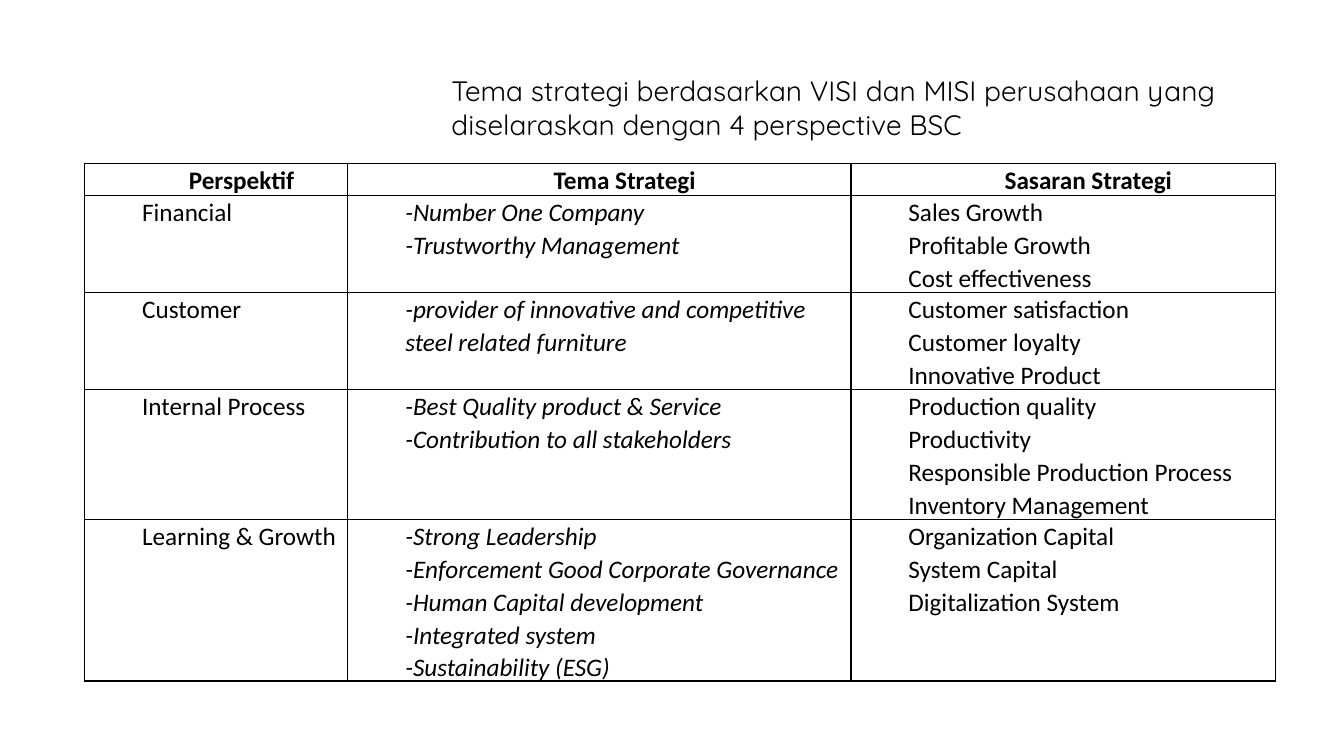
"""Build a slide with a table of strategy themes by scorecard perspective."""
from lxml.etree import SubElement
from pptx import Presentation
from pptx.dml.color import RGBColor
from pptx.enum.text import PP_ALIGN
from pptx.oxml.ns import qn
from pptx.util import Inches, Pt

COLORS = {"ink": "000000"}
INK = RGBColor.from_string(COLORS["ink"])
LINE = 0.32
WIDTHS = [2.61, 4.99, 4.21]
ROWS = [
    [["Perspektif"], ["Tema Strategi"], ["Sasaran Strategi"]],
    [["Financial"],
     ["-Number One Company", "-Trustworthy Management"],
     ["Sales Growth", "Profitable Growth", "Cost effectiveness"]],
    [["Customer"],
     ["-provider of innovative and competitive steel related furniture"],
     ["Customer satisfaction", "Customer loyalty", "Innovative Product"]],
    [["Internal Process"],
     ["-Best Quality product & Service", "-Contribution to all stakeholders"],
     ["Production quality", "Productivity", "Responsible Production Process",
      "Inventory Management"]],
    [["Learning & Growth"],
     ["-Strong Leadership", "-Enforcement Good Corporate Governance",
      "-Human Capital development", "-Integrated system",
      "-Sustainability (ESG)"],
     ["Organization Capital", "System Capital", "Digitalization System"]],
]


def style(font, name, size):
    font.name = name
    font.size = Pt(size)
    font.color.rgb = INK


def border(cell):
    props = cell._tc.get_or_add_tcPr()
    for side in ("lnL", "lnR", "lnT", "lnB"):
        line = SubElement(props, qn(f"a:{side}"), w=str(Pt(1)))
        fill = SubElement(line, qn("a:solidFill"))
        SubElement(fill, qn("a:srgbClr"), val=COLORS["ink"])


deck = Presentation()
deck.slide_width = Inches(13.33)
deck.slide_height = Inches(7.5)
slide = deck.slides.add_slide(deck.slide_layouts[6])

title = slide.shapes.add_textbox(
    Inches(4.38), Inches(0.68), Inches(8.27), Inches(1.11))
frame = title.text_frame
frame.word_wrap = True
frame.text = ("Tema strategi berdasarkan VISI dan MISI perusahaan yang "
              "diselaraskan dengan 4 perspective BSC")
style(frame.paragraphs[0].runs[0].font, "Quicksand", 20)

counts = [max(len(texts) for texts in row) for row in ROWS]
table = slide.shapes.add_table(
    len(ROWS), len(WIDTHS), Inches(0.84), Inches(1.62),
    Inches(sum(WIDTHS)), Inches(LINE * sum(counts))).table
table.first_row = False
table.horz_banding = False
for column, width in zip(table.columns, WIDTHS):
    column.width = Inches(width)

for r, row in enumerate(ROWS):
    table.rows[r].height = Inches(LINE * counts[r])
    for c, texts in enumerate(row):
        cell = table.cell(r, c)
        border(cell)
        cell.fill.background()
        cell.margin_left = cell.margin_right = Inches(0.07)
        cell.margin_top = cell.margin_bottom = 0
        cell.text_frame.text = "\n".join(texts)
        for para in cell.text_frame.paragraphs:
            para.line_spacing = 1.07
            para.alignment = PP_ALIGN.CENTER if r == 0 else PP_ALIGN.LEFT
            props = para._p.get_or_add_pPr()
            props.set("marL", str(Inches(0.5)))
            props.set("indent", "0")
            font = para.runs[0].font
            style(font, "Calibri", 18)
            font.bold = r == 0
            font.italic = r > 0 and c == 1

deck.save("out.pptx")
